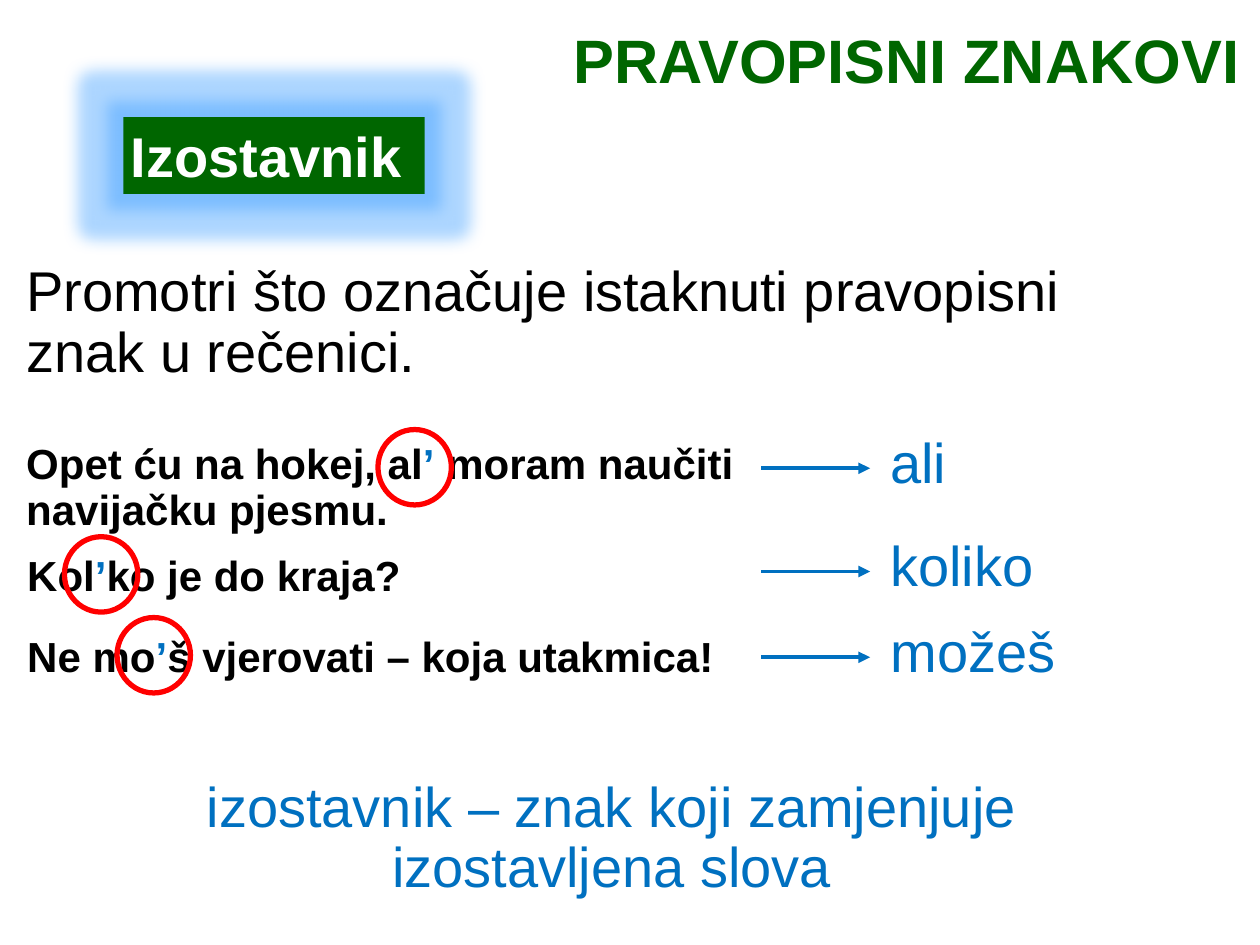
from lxml import etree
from pptx import Presentation
from pptx import util as u
from pptx.dml.color import RGBColor
from pptx.enum import shapes, text
from pptx.oxml.ns import qn

GREEN, BLUE, RED, BLACK, WHITE = "006600", "0070C0", "FF0000", "000000", "FFFFFF"
TITLE = "PRAVOPISNI ZNAKOVI"
TOPIC = "Izostavnik"
TASK = "Promotri što označuje istaknuti pravopisni znak u rečenici."
RULE = "izostavnik – znak koji zamjenjuje izostavljena slova"
MARK = "’"
EXAMPLES = [
    dict(words=("Opet ću na hokej, al", " moram naučiti navijačku pjesmu."),
         full="ali", left=0.28, top=8.81, width=17.25, ring=(7.62, 8.66), answer_top=8.64),
    dict(words=("Kol", "ko je do kraja?"),
         full="koliko", left=0.3, top=11.07, width=24.66, ring=(1.3, 10.82), answer_top=10.72),
    dict(words=("Ne mo", "š vjerovati – koja utakmica!"),
         full="možeš", left=0.3, top=12.7, width=24.66, ring=(2.36, 12.45), answer_top=12.45),
]


def rgb(value):
    return RGBColor.from_string(value)


def cm(*values):
    return [u.Cm(v) for v in values]


def add_text(s, runs, box, size=32, color=BLACK, bold=False, align="LEFT",
             anchor="TOP", spacing=0.9, before=7.5, insets=(0.25, 0.13)):
    tf = s.shapes.add_textbox(*cm(*box)).text_frame
    tf.word_wrap = True
    tf.vertical_anchor = text.MSO_ANCHOR[anchor]
    tf.margin_left = tf.margin_right = u.Cm(insets[0])
    tf.margin_top = tf.margin_bottom = u.Cm(insets[1])
    p = tf.paragraphs[0]
    p.alignment = text.PP_ALIGN[align]
    p.line_spacing = spacing
    p.space_before = u.Pt(before)
    for content, run_color in [(runs, color)] if isinstance(runs, str) else runs:
        r = p.add_run()
        r.text = content
        r.font.name = "Arial"
        r.font.size = u.Pt(size)
        r.font.bold = bold
        r.font.color.rgb = rgb(run_color)


def add_topic_box(s):
    sp = s.shapes.add_shape(shapes.MSO_SHAPE.RECTANGLE, *cm(2.49, 2.36, 6.07, 1.55))
    sp.shadow.inherit = False
    sp.fill.solid()
    sp.fill.fore_color.rgb = rgb(GREEN)
    sp.line.fill.background()
    effects = sp._element.spPr.find(qn("a:effectLst"))
    glow = etree.SubElement(effects, qn("a:glow"), rad=str(u.Pt(18)))
    color = etree.SubElement(glow, qn("a:srgbClr"), val="3399FF")
    etree.SubElement(color, qn("a:alpha"), val="40000")


def add_ring(s, left, top):
    sp = s.shapes.add_shape(shapes.MSO_SHAPE.OVAL, *cm(left, top, 1.48, 1.52))
    sp.shadow.inherit = False
    sp.fill.background()
    sp.line.color.rgb = rgb(RED)
    sp.line.width = u.Pt(3)


def add_arrow(s, y):
    arrow = s.shapes.add_connector(shapes.MSO_CONNECTOR.STRAIGHT, *cm(15.35, y, 17.54, y))
    arrow.line.color.rgb = rgb(BLUE)
    arrow.line.width = u.Pt(2.25)
    etree.SubElement(arrow.line._get_or_add_ln(), qn("a:tailEnd"), type="triangle")
    etree.SubElement(arrow._element.spPr, qn("a:effectLst"))


def main():
    prs = Presentation()
    prs.slide_width, prs.slide_height = cm(25.4, 19.05)
    s = prs.slides.add_slide(prs.slide_layouts[6])
    add_topic_box(s)
    add_text(s, TOPIC, (2.46, 1.78, 6.1, 2.13), color=WHITE, bold=True,
             anchor="BOTTOM", spacing=1.0, before=10, insets=(0.18, 0.1))
    add_text(s, TITLE, (2.49, 0.15, 22.76, 1.93), size=35, color=GREEN, bold=True,
             align="RIGHT", anchor="BOTTOM", before=0)
    add_text(s, TASK, (0.28, 5.18, 23.77, 3.2))
    for ex in EXAMPLES:
        start, rest = ex["words"]
        add_text(s, [(start, BLACK), (MARK, BLUE), (rest, BLACK)],
                 (ex["left"], ex["top"], ex["width"], 3.2), size=24, bold=True)
        add_ring(s, *ex["ring"])
        add_arrow(s, ex["answer_top"] + 0.8)
        add_text(s, ex["full"], (17.7, ex["answer_top"], 4.29, 1.83), color=BLUE)
    add_text(s, RULE, (1.12, 15.57, 22.43, 1.83), color=BLUE, align="CENTER")
    prs.save("out.pptx")


if __name__ == "__main__":
    main()
